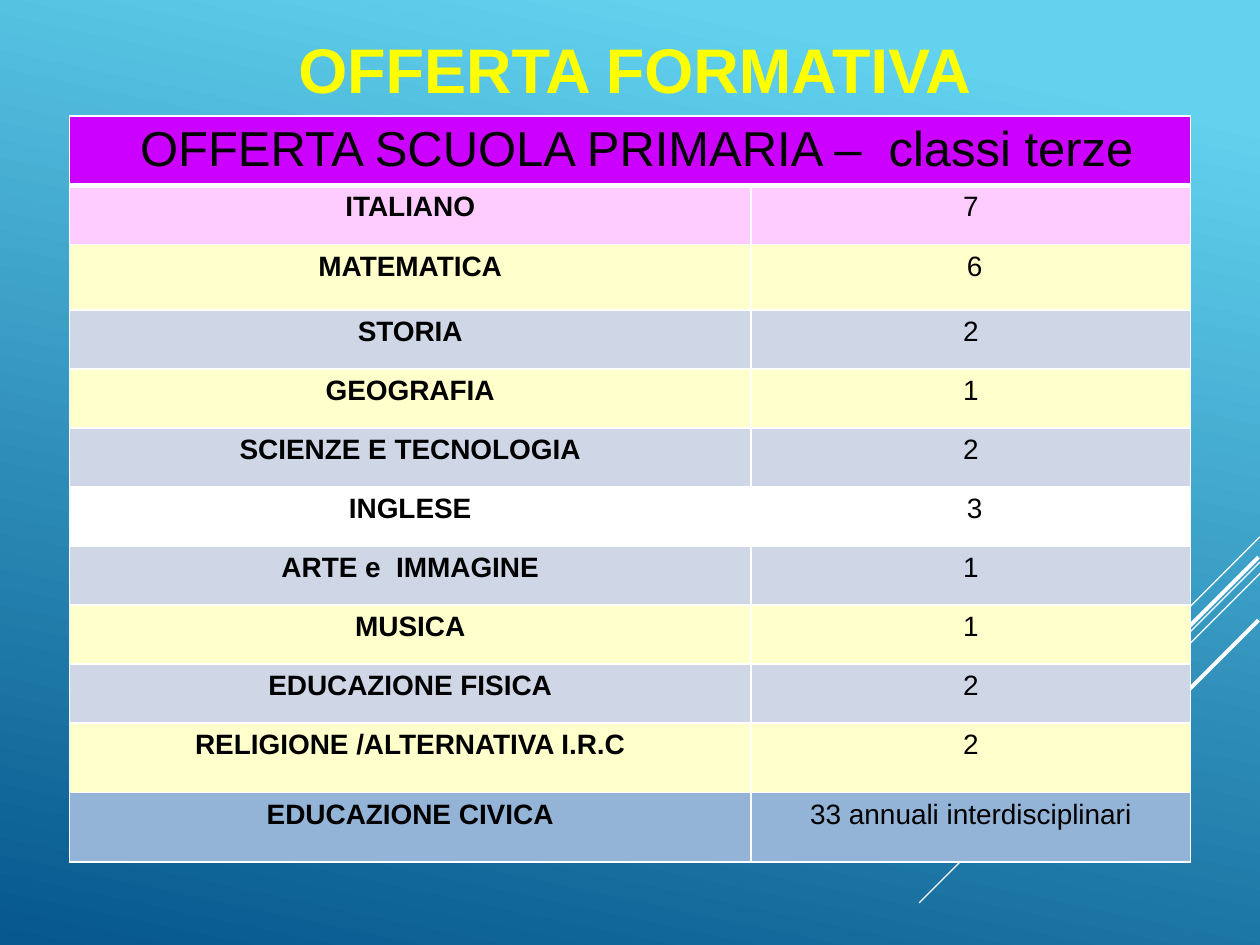
from lxml import etree
from pptx import Presentation
from pptx.dml.color import RGBColor
from pptx.enum.shapes import MSO_CONNECTOR
from pptx.enum.text import MSO_ANCHOR, MSO_AUTO_SIZE, PP_ALIGN
from pptx.oxml.ns import qn
from pptx.util import Cm, Pt

CENTER = PP_ALIGN.CENTER
TOP = MSO_ANCHOR.TOP
NO_FIT = MSO_AUTO_SIZE.NONE
STRAIGHT = MSO_CONNECTOR.STRAIGHT

FONT = "Arial"
COLORS = {
    "sky": "62D2EF", "sea": "05578D", "white": "FFFFFF", "black": "000000",
    "yellow": "FFFF00", "purple": "CC00FF", "pink": "FFCCFF",
    "cream": "FFFFCC", "gray": "CFD7E7", "blue": "93B3D7",
}

HEADER = " OFFERTA SCUOLA PRIMARIA –  classi terze"
HOURS = [
    ("ITALIANO", "7", "pink", 1.19),
    ("MATEMATICA", " 6", "cream", 1.32),
    ("STORIA", "2", "gray", 1.19),
    ("GEOGRAFIA", "1", "cream", 1.19),
    ("SCIENZE E TECNOLOGIA", "2", "gray", 1.19),
    ("INGLESE", " 3", "white", 1.19),
    ("ARTE e  IMMAGINE", "1", "gray", 1.19),
    ("MUSICA", "1", "cream", 1.19),
    ("EDUCAZIONE FISICA", "2", "gray", 1.19),
    ("RELIGIONE /ALTERNATIVA I.R.C", "2", "cream", 1.4),
    ("EDUCAZIONE CIVICA", "33 annuali interdisciplinari", "blue", 1.4),
]
HEAD_H = 1.4
WIDTHS = (13.74, 8.86)

STRIPES = [
    (25.4, 10.82, 2.11, 0.75),
    (25.4, 11.33, 6.87, 0.75),
    (25.4, 11.56, 4.37, 0.75),
    (25.37, 11.23, 3.98, 2.25),
    (25.37, 12.5, 2.89, 2.25),
]


def color(name):
    return RGBColor.from_string(COLORS[name])


def write(frame, text, size, tint, bold):
    frame.text = text
    par = frame.paragraphs[0]
    par.alignment = CENTER
    par.font.name = FONT
    par.font.size = Pt(size)
    par.font.bold = bold
    par.font.color.rgb = color(tint)


def paint_back(slide):
    fill = slide.background.fill
    fill.gradient()
    fill.gradient_angle = 360 - 102
    for stop, name, place in zip(fill.gradient_stops, ("sky", "sea"), (0.1, 1)):
        stop.color.rgb = color(name)
        stop.position = place


def add_stripe(slide, x, y, run, width):
    line = slide.shapes.add_connector(
        STRAIGHT, Cm(x), Cm(y), Cm(x - run), Cm(y + run))
    line.line.color.rgb = color("white")
    line.line.width = Pt(width)
    etree.SubElement(line._element.spPr, qn("a:effectLst"))


def add_title(slide, text):
    title = slide.shapes.title
    title.left, title.top = Cm(2.13), Cm(0.48)
    title.width, title.height = Cm(21.64), Cm(5.38)
    frame = title.text_frame
    frame.vertical_anchor = TOP
    frame.auto_size = NO_FIT
    write(frame, text, 36, "yellow", True)


def add_edges(cell, base):
    props = cell._tc.get_or_add_tcPr()
    for side, width in zip("LRTB", (1, 1, 1, base)):
        edge = etree.SubElement(props, qn(f"a:ln{side}"), w=str(Pt(width)))
        fill = etree.SubElement(edge, qn("a:solidFill"))
        etree.SubElement(fill, qn("a:srgbClr"), val=COLORS["white"])


def style_cell(cell, fill, base=1):
    add_edges(cell, base)
    cell.fill.solid()
    cell.fill.fore_color.rgb = color(fill)


def add_hours(slide):
    heights = [HEAD_H] + [row[3] for row in HOURS]
    table = slide.shapes.add_table(
        len(heights), len(WIDTHS), Cm(1.4), Cm(2.34),
        Cm(sum(WIDTHS)), Cm(sum(heights))).table
    for col, width in zip(table.columns, WIDTHS):
        col.width = Cm(width)
    for row, height in zip(table.rows, heights):
        row.height = Cm(height)

    head, last = table.rows[0].cells
    for cell in (head, last):
        style_cell(cell, "purple", 3)
    head.merge(last)
    write(head.text_frame, HEADER, 28, "black", False)

    for i, (name, hours, fill, _) in enumerate(HOURS, 1):
        for j, text in enumerate((name, hours)):
            cell = table.cell(i, j)
            style_cell(cell, fill)
            write(cell.text_frame, text, 16, "black", j == 0)


def main():
    deck = Presentation()
    deck.slide_width, deck.slide_height = Cm(25.4), Cm(19.05)
    slide = deck.slides.add_slide(deck.slide_layouts[5])
    paint_back(slide)
    for stripe in STRIPES:
        add_stripe(slide, *stripe)
    add_title(slide, "OFFERTA FORMATIVA ")
    add_hours(slide)
    deck.save("out.pptx")


if __name__ == "__main__":
    main()
